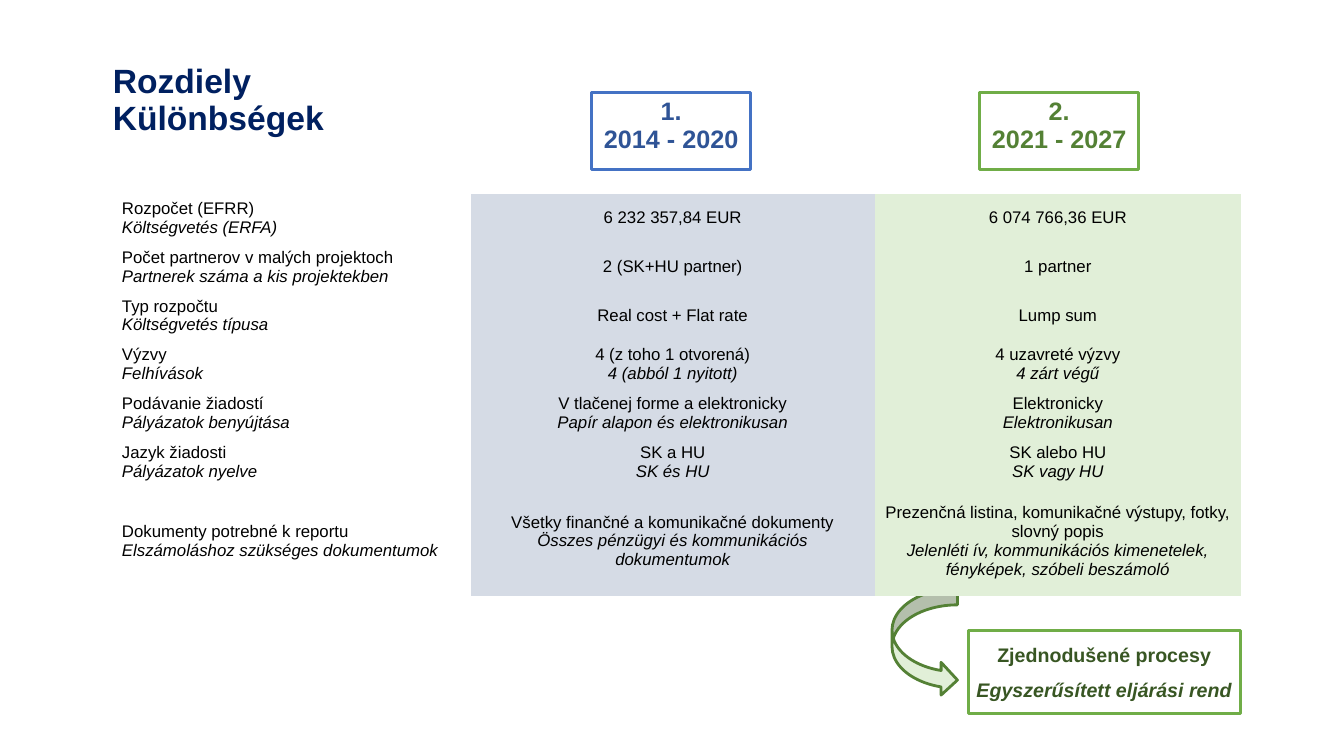
from dataclasses import dataclass
from typing import NamedTuple, Optional

from pptx import Presentation
from pptx.dml.color import RGBColor
from pptx.enum.shapes import MSO_SHAPE
from pptx.enum.text import MSO_ANCHOR, MSO_AUTO_SIZE, PP_ALIGN
from pptx.oxml.ns import qn
from pptx.util import Cm, Pt


@dataclass(frozen=True)
class Theme:
    font: str = "Arial"
    title_size: int = 24
    period_size: int = 18
    note_size: int = 14
    table_size: int = 12
    line_width: int = 2
    navy: str = "002060"
    black: str = "000000"
    white: str = "FFFFFF"
    blue_line: str = "4472C4"
    blue_text: str = "2F5496"
    blue_fill: str = "D5DBE5"
    green_line: str = "70AD47"
    green_text: str = "548135"
    green_fill: str = "E1EFD8"
    green_dark: str = "385623"


class Area(NamedTuple):
    left: float
    top: float
    width: float
    height: float


class Period(NamedTuple):
    left: float
    lines: list[str]
    line_color: str
    text_color: str


class Row(NamedTuple):
    """Each cell holds a Slovak line and, where there is one, its Hungarian line."""
    topic: list[str]
    first: list[str]
    second: list[str]


THEME = Theme()
NO_STYLE_NO_GRID = "{2D5ABB26-0587-4C30-8999-92F81FD0307C}"
TITLE_AREA = Area(2.59, 0.71, 29.21, 3.68)
TABLE_AREA = Area(2.82, 4.88, 28.45, 10.13)
COLUMN_WIDTHS = [9.04, 10.19, 9.22]
COLUMN_FILLS = [None, THEME.blue_fill, THEME.green_fill]
ROW_HEIGHT, LAST_ROW_HEIGHT = 1.23, 2.75
ARROW_AREA = Area(22.48, 14.83, 1.65, 2.72)
NOTE_AREA = Area(24.4, 15.88, 6.86, 2.11)
PERIOD_TOP, PERIOD_WIDTH, PERIOD_HEIGHT = 2.34, 4.01, 1.93

PERIODS = [
    Period(14.91, ["1.", "2014 - 2020"], THEME.blue_line, THEME.blue_text),
    Period(24.69, ["2.", "2021 - 2027"], THEME.green_line, THEME.green_text),
]
NOTE = ["Zjednodušené procesy", "Egyszerűsített eljárási rend"]
ROWS = [
    Row(["Rozpočet (EFRR)", "Költségvetés (ERFA)"],
        ["6 232 357,84 EUR"], ["6 074 766,36 EUR"]),
    Row(["Počet partnerov v malých projektoch", "Partnerek száma a kis projektekben"],
        ["2 (SK+HU partner)"], ["1 partner"]),
    Row(["Typ rozpočtu", "Költségvetés típusa"],
        ["Real cost + Flat rate"], ["Lump sum"]),
    Row(["Výzvy", "Felhívások"],
        ["4 (z toho 1 otvorená)", "4 (abból 1 nyitott)"],
        ["4 uzavreté výzvy", "4 zárt végű"]),
    Row(["Podávanie žiadostí", "Pályázatok benyújtása"],
        ["V tlačenej forme a elektronicky", "Papír alapon és elektronikusan"],
        ["Elektronicky", "Elektronikusan"]),
    Row(["Jazyk žiadosti", "Pályázatok nyelve"],
        ["SK a HU", "SK és HU"], ["SK alebo HU", "SK vagy HU"]),
    Row(["Dokumenty potrebné k reportu", "Elszámoláshoz szükséges dokumentumok"],
        ["Všetky finančné a komunikačné dokumenty",
         "Összes pénzügyi és kommunikációs dokumentumok"],
        ["Prezenčná listina, komunikačné výstupy, fotky, slovný popis",
         "Jelenléti ív, kommunikációs kimenetelek, fényképek, szóbeli beszámoló"]),
]


def to_cm(area: Area) -> list[Cm]:
    return [Cm(length) for length in area]


def write_lines(frame, lines: list[str], size: int, color: str, bold: bool = False,
                align: PP_ALIGN = PP_ALIGN.CENTER, second_italic: bool = False) -> None:
    frame.text = "\n".join(lines)
    for index, paragraph in enumerate(frame.paragraphs):
        paragraph.alignment = align
        for span in paragraph.runs:
            span.font.name = THEME.font
            span.font.size = Pt(size)
            span.font.bold = bold
            span.font.italic = second_italic and index == 1
            span.font.color.rgb = RGBColor.from_string(color)


def add_outlined_shape(slide, kind: MSO_SHAPE, area: Area, line_color: str,
                       fill_color: Optional[str] = None):
    shape = slide.shapes.add_shape(kind, *to_cm(area))
    shape.shadow.inherit = False
    shape.line.color.rgb = RGBColor.from_string(line_color)
    shape.line.width = Pt(THEME.line_width)
    if fill_color is None:
        shape.fill.background()
    else:
        shape.fill.solid()
        shape.fill.fore_color.rgb = RGBColor.from_string(fill_color)
    return shape


def add_title(slide) -> None:
    title = slide.shapes.title
    title.left, title.top, title.width, title.height = to_cm(TITLE_AREA)
    frame = title.text_frame
    write_lines(frame, ["Rozdiely\vKülönbségek"], THEME.title_size, THEME.navy,
                bold=True, align=PP_ALIGN.LEFT)
    frame.vertical_anchor = MSO_ANCHOR.MIDDLE
    frame.auto_size = MSO_AUTO_SIZE.NONE
    frame.paragraphs[0].line_spacing = 0.9


def add_comparison_table(slide) -> None:
    graphic = slide.shapes.add_table(len(ROWS), len(COLUMN_WIDTHS), *to_cm(TABLE_AREA))
    table = graphic.table
    table.first_row = table.horz_banding = False
    for style in graphic.element.iter(qn("a:tableStyleId")):
        style.text = NO_STYLE_NO_GRID
    for column, width in zip(table.columns, COLUMN_WIDTHS):
        column.width = Cm(width)
    for row_index, row in enumerate(ROWS):
        is_last = row_index == len(ROWS) - 1
        table.rows[row_index].height = Cm(LAST_ROW_HEIGHT if is_last else ROW_HEIGHT)
        for column_index, (lines, fill) in enumerate(zip(row, COLUMN_FILLS)):
            cell = table.cell(row_index, column_index)
            cell.vertical_anchor = MSO_ANCHOR.MIDDLE
            if fill is None:
                cell.fill.background()
            else:
                cell.fill.solid()
                cell.fill.fore_color.rgb = RGBColor.from_string(fill)
            write_lines(cell.text_frame, lines, THEME.table_size, THEME.black,
                        align=PP_ALIGN.CENTER if column_index else PP_ALIGN.LEFT,
                        second_italic=True)


def add_period(slide, period: Period) -> None:
    area = Area(period.left, PERIOD_TOP, PERIOD_WIDTH, PERIOD_HEIGHT)
    box = add_outlined_shape(slide, MSO_SHAPE.RECTANGLE, area, period.line_color)
    frame = box.text_frame
    frame.word_wrap = False
    frame.vertical_anchor = MSO_ANCHOR.BOTTOM
    frame.margin_bottom = Cm(0.4)
    write_lines(frame, period.lines, THEME.period_size, period.text_color, bold=True)
    for paragraph in frame.paragraphs:
        paragraph.line_spacing = 0.9


def add_note(slide) -> None:
    box = add_outlined_shape(slide, MSO_SHAPE.RECTANGLE, NOTE_AREA,
                             THEME.green_line, THEME.white)
    frame = box.text_frame
    frame.word_wrap = False
    frame.vertical_anchor = MSO_ANCHOR.MIDDLE
    write_lines(frame, NOTE, THEME.note_size, THEME.green_dark, bold=True,
                second_italic=True)
    frame.paragraphs[1].space_before = Pt(8)


def main() -> None:
    deck = Presentation()
    deck.slide_width, deck.slide_height = Cm(33.87), Cm(19.05)
    slide = deck.slides.add_slide(deck.slide_layouts.get_by_name("Title Only"))
    add_title(slide)
    add_outlined_shape(slide, MSO_SHAPE.CURVED_RIGHT_ARROW, ARROW_AREA,
                       THEME.green_text, THEME.green_fill)
    add_note(slide)
    add_comparison_table(slide)
    for period in PERIODS:
        add_period(slide, period)
    deck.save("out.pptx")


if __name__ == "__main__":
    main()
